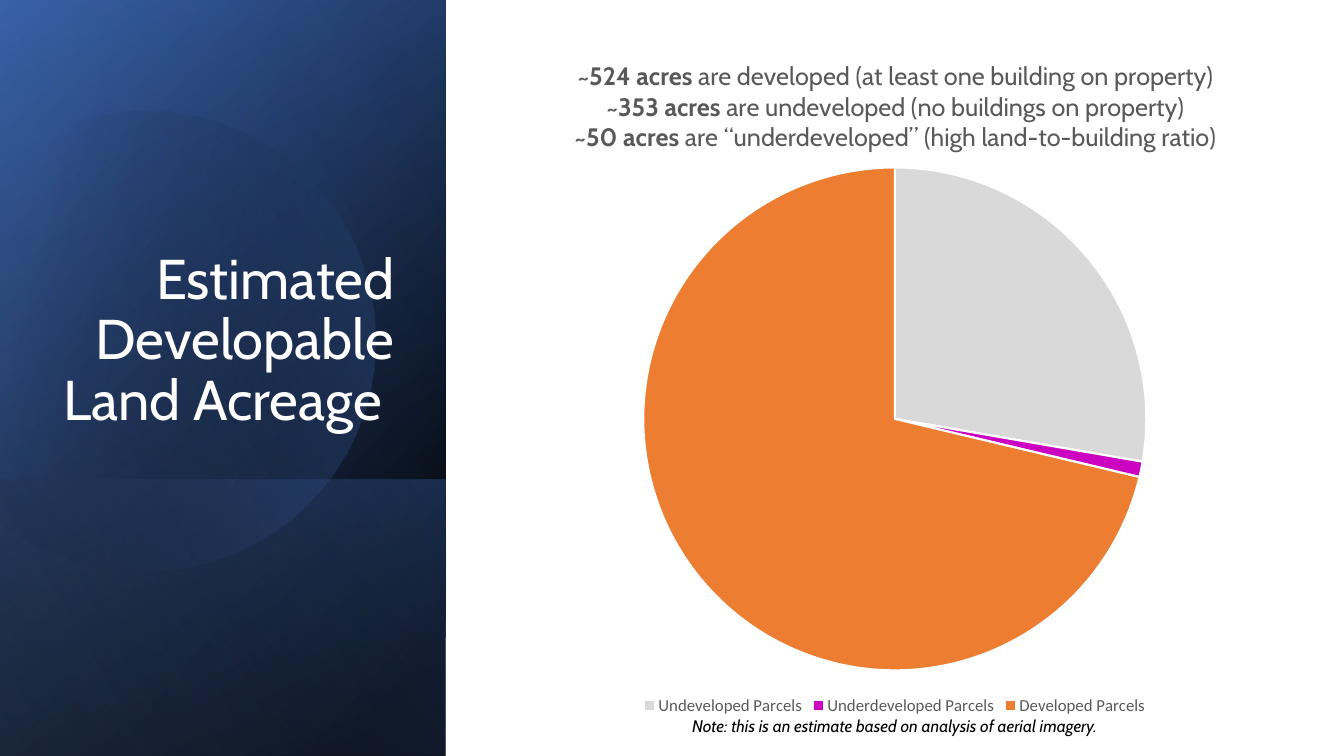
import math
import pptx
import pptx.chart.data
import pptx.dml.color
import pptx.enum.chart
import pptx.enum.shapes
import pptx.enum.text
import pptx.oxml
import pptx.oxml.ns
import pptx.util

COLORS = {"white": "FFFFFF", "black": "000000", "navy": "2F5597", "blue": "4472C4",
          "pale": "8FAADC", "text": "595959", "undeveloped": "D9D9D9",
          "underdeveloped": "CC04C2", "developed": "ED7D31"}
WIDTH, HEIGHT = 13.33, 7.5
PANEL = 4.42
inch = pptx.util.Inches


def color(name):
    return pptx.dml.color.RGBColor.from_string(COLORS[name])


def paint_gradient(shape, stops, angle):
    """Fill with (position, colour, opacity) stops along a clockwise angle."""
    shape.shadow.inherit = False
    shape.line.fill.background()
    shape.fill.gradient()
    gradient = shape._element.spPr.find(pptx.oxml.ns.qn("a:gradFill"))
    marks = "".join(
        f'<a:gs pos="{position * 1000}"><a:srgbClr val="{COLORS[name]}">'
        f'<a:alpha val="{opacity * 1000}"/></a:srgbClr></a:gs>'
        for position, name, opacity in stops)
    gradient.getparent().replace(gradient, pptx.oxml.parse_xml(
        f'<a:gradFill {pptx.oxml.ns.nsdecls("a")} rotWithShape="1"><a:gsLst>{marks}</a:gsLst>'
        f'<a:lin ang="{angle * 60000}" scaled="0"/></a:gradFill>'))


presentation = pptx.Presentation()
presentation.slide_width, presentation.slide_height = inch(WIDTH), inch(HEIGHT)
slide = presentation.slides.add_slide(presentation.slide_layouts[6])
shapes = slide.shapes
rectangle = pptx.enum.shapes.MSO_SHAPE.RECTANGLE

# White backdrop
backdrop = shapes.add_shape(rectangle, 0, 0, inch(WIDTH), inch(HEIGHT))
backdrop.shadow.inherit = False
backdrop.fill.solid()
backdrop.fill.fore_color.rgb = color("white")
backdrop.line.fill.background()

# Left panel: mirrored rectangles turned upright, with a glowing disc below the last
layers = [
    (HEIGHT, [(8, "black", 100), (100, "navy", 100)], 50),
    (HEIGHT, [(0, "black", 0), (99, "blue", 46)], 30),
    (2.74, [(2, "blue", 29), (100, "black", 30)], 130),
    "disc",
    (HEIGHT, [(0, "black", 0), (99, "pale", 11)], 120),
]
disc_curves = [
    [(1.49, 1.1), (2.46, 1.12), (3.35, 1.77), (3.63, 2.75)],
    [(3.63, 2.75), (3.98, 3.97), (3.28, 5.23), (2.07, 5.58)],
    [(2.07, 5.58), (1.31, 5.8), (0.53, 5.61), (-0.03, 5.14)],
    [(-0.15, 5.03)],
    [(-0.15, 1.75)],
    [(0, 1.61), (0.23, 1.42), (0.5, 1.28), (0.8, 1.19)],
    [(0.8, 1.19), (1.03, 1.13), (1.26, 1.1), (1.49, 1.1)],
]
disc_left, disc_top, disc_width, disc_height = -0.55, 1.06, 4.27, 4.57
disc_turn = 343.9
steps = 16
units = 1000  # freeform points are whole numbers, so count in thousandths of an inch
for layer in layers:
    if layer == "disc":
        center_x, center_y = disc_left + disc_width / 2, disc_top + disc_height / 2
        cosine = math.cos(math.radians(-disc_turn))
        sine = math.sin(math.radians(-disc_turn))
        outline = []
        for curve in disc_curves:
            degree = len(curve) - 1
            for step in range(steps + 1 if degree else 1):
                t = step / steps
                weights = [math.comb(degree, i) * t**i * (1 - t)**(degree - i)
                           for i in range(degree + 1)]
                x = sum(w * p[0] for w, p in zip(weights, curve)) - center_x
                y = sum(w * p[1] for w, p in zip(weights, curve)) - center_y
                outline.append((units * (center_x + x * cosine - y * sine),
                                units * (center_y + x * sine + y * cosine)))
        builder = shapes.build_freeform(*outline[0], scale=inch(1) / units)
        builder.add_line_segments(outline[1:], close=True)
        disc = builder.convert_to_shape()
        disc.left, disc.top = inch(disc_left), inch(disc_top)
        disc.width, disc.height = inch(disc_width), inch(disc_height)
        disc.rotation = disc_turn
        paint_gradient(disc, [(29, "black", 0), (100, "blue", 43)], 30)
        continue
    length, stops, angle = layer
    panel = shapes.add_shape(rectangle, inch((PANEL - length) / 2),
                             inch(HEIGHT - (length + PANEL) / 2), inch(length), inch(PANEL))
    panel.rotation = 90
    panel._element.spPr.xfrm.set("flipH", "1")
    paint_gradient(panel, stops, angle)

# Pie chart
data = pptx.chart.data.CategoryChartData()
data.categories = ["Undeveloped Parcels", "Underdeveloped Parcels", "Developed Parcels"]
data.add_series("Series 1", [28, 1, 72])
chart = shapes.add_chart(pptx.enum.chart.XL_CHART_TYPE.PIE, inch(PANEL), inch(0.36),
                         inch(WIDTH - PANEL), inch(6.78), data).chart
chart.font.name, chart.font.size = "Calibri", pptx.util.Pt(10)
chart.font.color.rgb = color("black")
pie = chart.plots[0]
pie.vary_by_categories = True
for index, name in enumerate(["undeveloped", "underdeveloped", "developed"]):
    slice_format = pie.series[0].points[index].format
    slice_format.fill.solid()
    slice_format.fill.fore_color.rgb = color(name)
    slice_format.line.color.rgb = color("white")
    slice_format.line.width = pptx.util.Pt(1.5)

chart.has_legend = True
chart.legend.position = pptx.enum.chart.XL_LEGEND_POSITION.BOTTOM
chart.legend.include_in_layout = False
chart.legend.font.name, chart.legend.font.size = "Calibri", pptx.util.Pt(12)
chart.legend.font.color.rgb = color("text")

# Chart title: amount in bold, meaning in regular
chart.has_title = True
title_frame = chart.chart_title.text_frame
for index, (amount, meaning) in enumerate([
        ("~524 acres", " are developed (at least one building on property)"),
        ("~353 acres", " are undeveloped (no buildings on property)"),
        ("~50 acres", " are “underdeveloped” (high land-to-building ratio)")]):
    paragraph = title_frame.add_paragraph() if index else title_frame.paragraphs[0]
    paragraph.alignment = pptx.enum.text.PP_ALIGN.CENTER
    for words, bold in [(amount, True), (meaning, False)]:
        run = paragraph.add_run()
        run.text = words
        run.font.name, run.font.size, run.font.bold = "Cabin", pptx.util.Pt(18), bold
        run.font.color.rgb = color("text")

# Fixed places for the title and the pie, as shares of the chart
title = chart.chart_title._element
plot_area = chart._chartSpace.chart.plotArea
for owner, target, shares in [
        (title, "", {"x": 0.14, "y": 0.03}),
        (plot_area, '<c:layoutTarget val="inner"/>',
         {"x": 0.22, "y": 0.19, "w": 0.56, "h": 0.74})]:
    for old in owner.findall(pptx.oxml.ns.qn("c:layout")):
        owner.remove(old)
    modes = "".join(f'<c:{key}Mode val="edge"/>' for key in "xy")
    sizes = "".join(f'<c:{key} val="{share}"/>' for key, share in shares.items())
    layout = pptx.oxml.parse_xml(
        f'<c:layout {pptx.oxml.ns.nsdecls("c")}><c:manualLayout>{target}{modes}{sizes}'
        '</c:manualLayout></c:layout>')
    owner.insert(1 if owner is title else 0, layout)

# Slide title and note
for words, box, size, name, italic, alignment, anchor, spacing in [
        ("Estimated Developable Land Acreage ", (0.51, 0.64, 3.5, 3.7), 40, "white", False,
         pptx.enum.text.PP_ALIGN.RIGHT, pptx.enum.text.MSO_ANCHOR.BOTTOM, 0.9),
        ("Note: this is an estimate based on analysis of aerial imagery.",
         (4.8, 7.05, 8.15, 0.3), 12, "black", True,
         pptx.enum.text.PP_ALIGN.CENTER, pptx.enum.text.MSO_ANCHOR.TOP, 1.0)]:
    frame = shapes.add_textbox(*map(inch, box)).text_frame
    frame.word_wrap = True
    frame.vertical_anchor = anchor
    paragraph = frame.paragraphs[0]
    paragraph.text = words
    paragraph.alignment, paragraph.line_spacing = alignment, spacing
    paragraph.font.name, paragraph.font.size = "Cabin", pptx.util.Pt(size)
    paragraph.font.italic = italic
    paragraph.font.color.rgb = color(name)

presentation.save("out.pptx")
